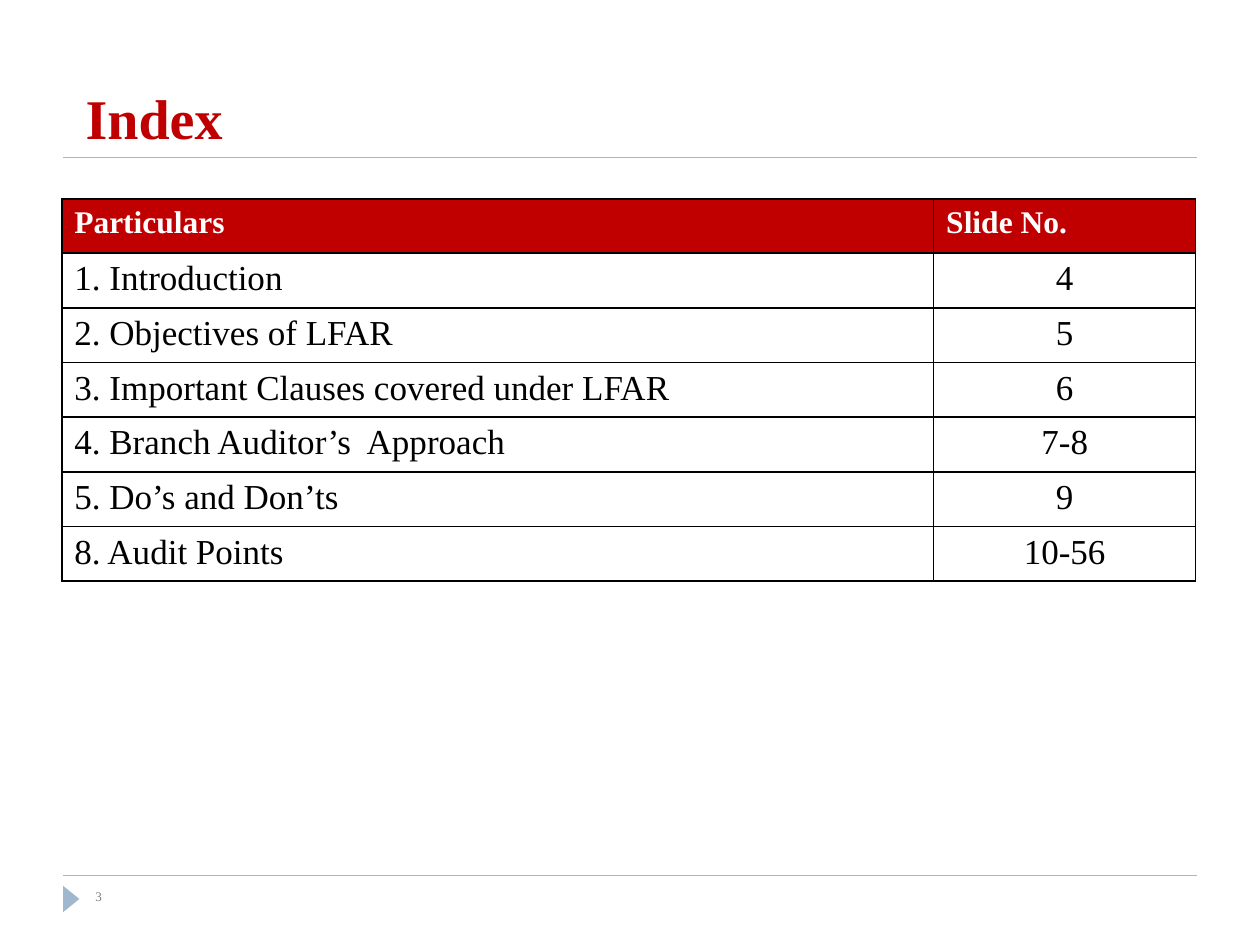
from lxml import etree
from pptx import Presentation
from pptx import util as u
from pptx.dml.color import RGBColor
from pptx.enum import shapes, text
from pptx.oxml.ns import qn

# Content
TITLE = "Index"
PAGE = "3"
ROWS = [
    ("Particulars", "Slide No."),
    ("1. Introduction", "4"),
    ("2. Objectives of LFAR", "5"),
    ("3. Important Clauses covered under LFAR", "6"),
    ("4. Branch Auditor’s  Approach", "7-8"),
    ("5. Do’s and Don’ts", "9"),
    ("8. Audit Points", "10-56"),
]
COL_WIDTHS = (6.92, 2.08)
ROW_HEIGHT = 0.43
RULES_Y = (6.95, 1.25)
FONT = "Times New Roman"
COLORS = {"accent": "9FB8CD", "red": "C00000", "white": "FFFFFF",
          "black": "000000", "gray": "808080"}


def rgb(name):
    return RGBColor.from_string(COLORS[name])


def write(tf, content, size, color="black", bold=False, align=text.PP_ALIGN.LEFT):
    p = tf.paragraphs[0]
    p.alignment = align
    r = p.add_run()
    r.text = content
    r.font.name = FONT
    r.font.size = u.Pt(size)
    r.font.bold = bold
    r.font.color.rgb = rgb(color)


def add_borders(cell):
    tc_pr = cell._tc.get_or_add_tcPr()
    for i, side in enumerate(("a:lnL", "a:lnR", "a:lnT", "a:lnB")):
        ln = etree.Element(qn(side), w=str(u.Pt(1)))
        fill = etree.SubElement(ln, qn("a:solidFill"))
        etree.SubElement(fill, qn("a:srgbClr"), val=COLORS["black"])
        tc_pr.insert(i, ln)


prs = Presentation()
prs.slide_width, prs.slide_height = u.Inches(10), u.Inches(7.5)
s = prs.slides.add_slide(prs.slide_layouts[5])

# Rules below the title and above the footer
for y in RULES_Y:
    rule = s.shapes.add_connector(shapes.MSO_CONNECTOR.STRAIGHT, u.Inches(0.5),
                                  u.Inches(y), u.Inches(9.5), u.Inches(y))
    rule.line.color.rgb = rgb("accent")
    rule.line.width = u.Pt(0.75)
    etree.SubElement(rule._element.spPr, qn("a:effectLst"))

# Footer marker and page number
marker = s.shapes.add_shape(shapes.MSO_SHAPE.ISOSCELES_TRIANGLE, u.Inches(0.46),
                            u.Inches(7.07), u.Inches(0.21), u.Inches(0.13))
marker.rotation = 90
marker.shadow.inherit = False
marker.fill.solid()
marker.fill.fore_color.rgb = rgb("accent")
marker.line.fill.background()

page = s.shapes.add_textbox(u.Inches(0.66), u.Inches(7), u.Inches(4.33), u.Inches(0.3))
page.text_frame.word_wrap = True
write(page.text_frame, PAGE, 7.5, "gray")

# Title
title = s.shapes.title
title.left, title.top = u.Inches(0.58), u.Inches(0.17)
title.width, title.height = u.Inches(9), u.Inches(1.08)
title.text_frame.vertical_anchor = text.MSO_ANCHOR.BOTTOM
write(title.text_frame, TITLE, 32, "red", bold=True)

# Index table
table = s.shapes.add_table(len(ROWS), len(COL_WIDTHS), u.Inches(0.49), u.Inches(1.58),
                           u.Inches(sum(COL_WIDTHS)),
                           u.Inches(ROW_HEIGHT * len(ROWS))).table
for col, width in zip(table.columns, COL_WIDTHS):
    col.width = u.Inches(width)
for i, row in enumerate(ROWS):
    table.rows[i].height = u.Inches(ROW_HEIGHT)
    for j, value in enumerate(row):
        cell = table.cell(i, j)
        cell.fill.solid()
        cell.fill.fore_color.rgb = rgb("white" if i else "red")
        add_borders(cell)
        if i == 0:
            write(cell.text_frame, value, 18, "white", bold=True)
        else:
            write(cell.text_frame, value, 20,
                  align=text.PP_ALIGN.CENTER if j else text.PP_ALIGN.LEFT)

prs.save("out.pptx")
